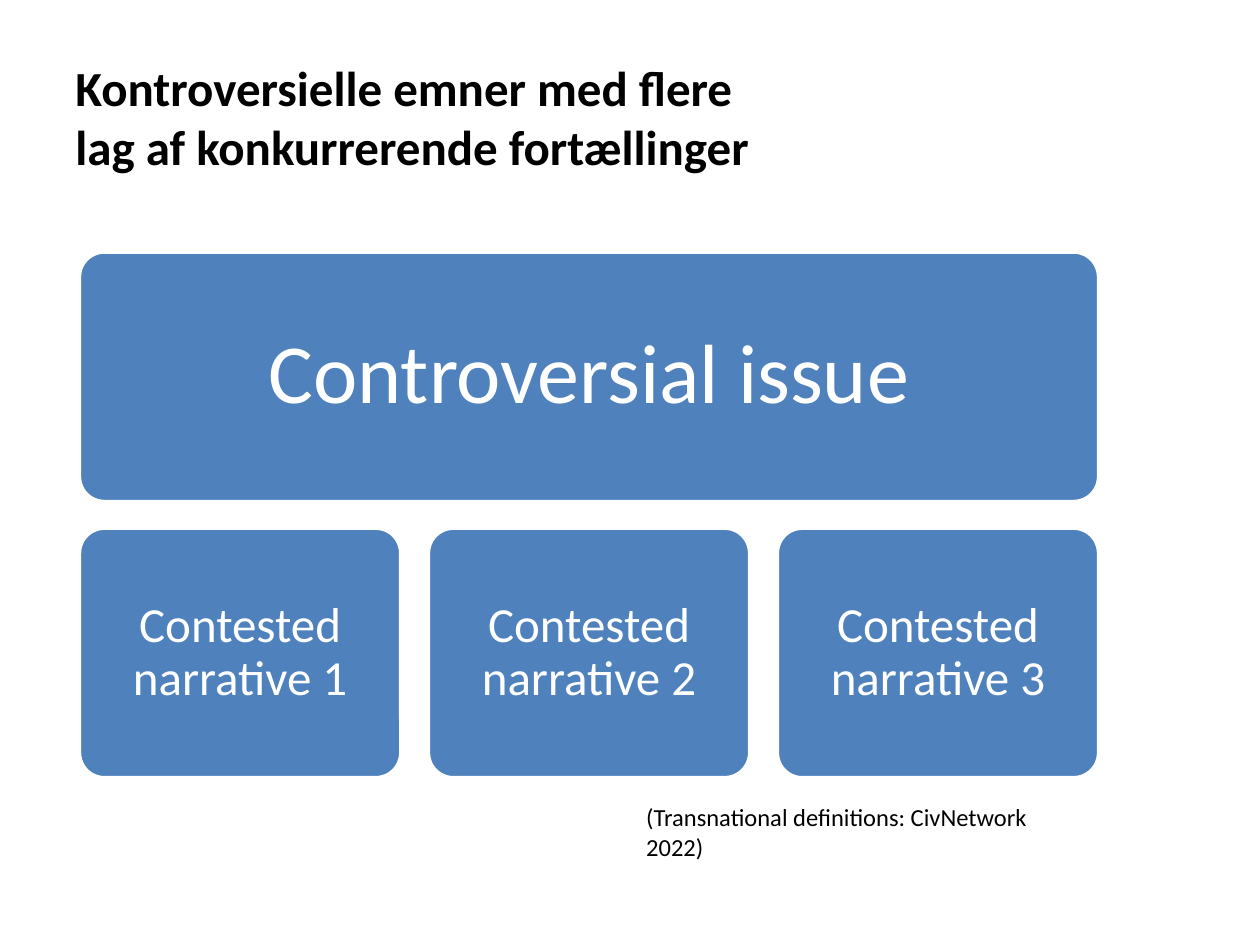
from pptx import Presentation
from pptx.util import Pt
from pptx.dml.color import RGBColor
from pptx.enum.shapes import MSO_SHAPE
from pptx.enum.text import MSO_ANCHOR, PP_ALIGN

TITLE = ["Kontroversielle emner med flere", "lag af konkurrerende fortællinger"]
ISSUE = "Controversial issue"
PARTS = ["Contested narrative 1", "Contested narrative 2", "Contested narrative 3"]
NOTE = "(Transnational definitions: CivNetwork 2022)"

BLUE = RGBColor(0x4F, 0x81, 0xBD)
WHITE = RGBColor(0xFF, 0xFF, 0xFF)
BLACK = RGBColor(0, 0, 0)
FONT = "Calibri"

LEFT, TOP = 45.4, 144
WIDE, HIGH = 582.4, 142.6
GAP, DROP = 15.8, 15.2
PART = (WIDE - GAP * (len(PARTS) - 1)) / len(PARTS)

prs = Presentation()
prs.slide_width, prs.slide_height = Pt(720), Pt(540)
slide = prs.slides.add_slide(prs.slide_layouts[6])


def add_run(para, text, size, color, bold=False):
    run = para.add_run()
    run.text = text
    font = run.font
    font.name, font.size, font.bold = FONT, Pt(size), bold
    font.color.rgb = color


def add_text(x, y, w, h, lines, size, bold=False, wrap=True):
    frame = slide.shapes.add_textbox(Pt(x), Pt(y), Pt(w), Pt(h)).text_frame
    frame.word_wrap = wrap
    frame.vertical_anchor = MSO_ANCHOR.MIDDLE
    para = frame.paragraphs[0]
    for i, line in enumerate(lines):
        if i:
            para.add_line_break()
        add_run(para, line, size, BLACK, bold)


def add_box(x, y, w, text, size, inset):
    box = slide.shapes.add_shape(MSO_SHAPE.ROUNDED_RECTANGLE, Pt(x), Pt(y), Pt(w), Pt(HIGH))
    box.adjustments[0] = 0.1
    box.shadow.inherit = False
    box.fill.solid()
    box.fill.fore_color.rgb = BLUE
    box.line.color.rgb = WHITE
    box.line.width = Pt(2)
    frame = box.text_frame
    frame.word_wrap = True
    frame.vertical_anchor = MSO_ANCHOR.MIDDLE
    frame.margin_left = frame.margin_right = Pt(inset)
    frame.margin_top = frame.margin_bottom = Pt(inset)
    para = frame.paragraphs[0]
    para.alignment = PP_ALIGN.CENTER
    para.line_spacing = 0.9
    add_run(para, text, size, WHITE)


add_text(36, 21.6, 648, 90, TITLE, 28, bold=True)
add_box(LEFT, TOP, WIDE, ISSUE, 48, 14.4)
for i, name in enumerate(PARTS):
    add_box(LEFT + i * (PART + GAP), TOP + HIGH + DROP, PART, name, 28, 8.6)
add_text(362.2, 463, 266.4, 24.5, [NOTE], 14, wrap=False)

prs.save("out.pptx")
